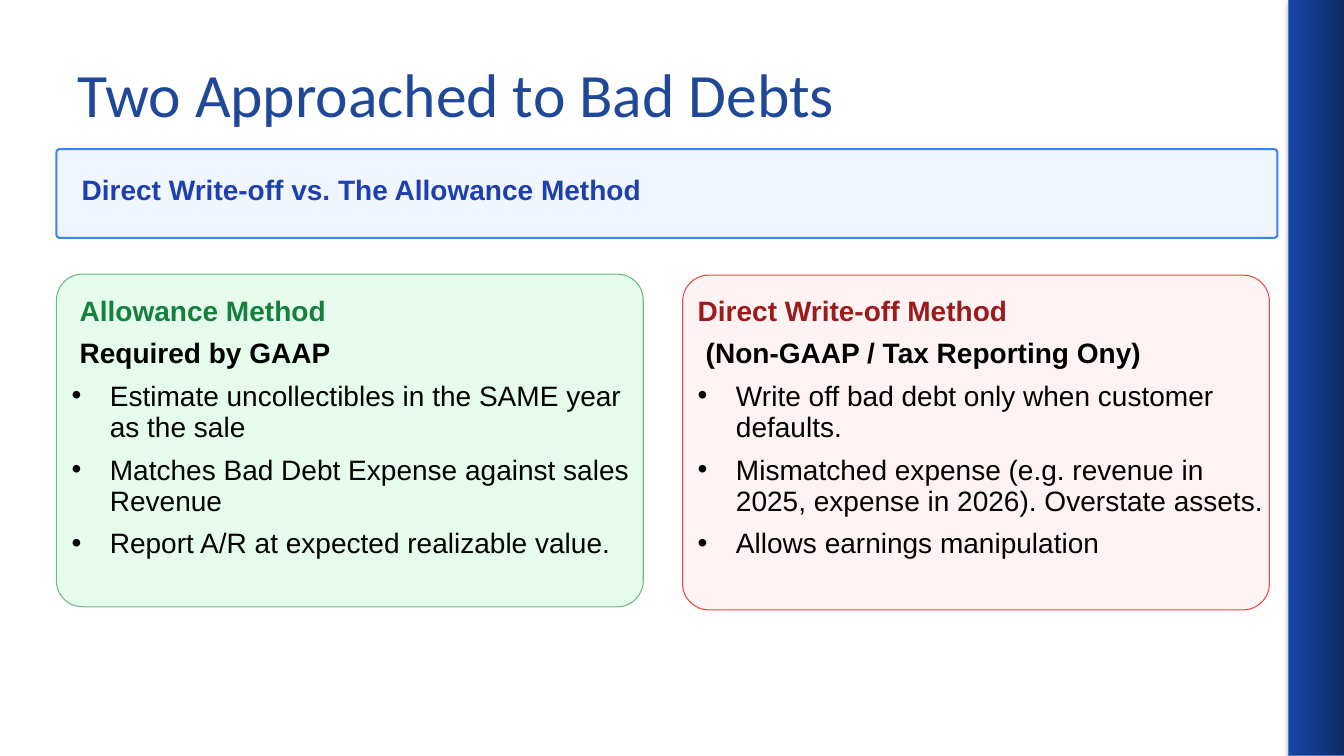
from copy import deepcopy

from lxml import etree
from pptx import Presentation
from pptx.dml.color import RGBColor
from pptx.enum.shapes import MSO_SHAPE
from pptx.enum.text import MSO_ANCHOR, PP_ALIGN
from pptx.oxml.ns import qn
from pptx.util import Inches, Pt

RECT, ROUNDED = MSO_SHAPE.RECTANGLE, MSO_SHAPE.ROUNDED_RECTANGLE
LEFT, MIDDLE = PP_ALIGN.LEFT, MSO_ANCHOR.MIDDLE

COLORS = {
    "title": "1F4899", "text": "000000", "shadow": "000000",
    "band_dark": "0D2960", "band_mid": "123A89", "band_light": "1645A2", "band_line": "4B7EBC",
    "banner_fill": "EFF6FF", "banner_line": "3B82F6", "banner_text": "1E40AF",
    "allowance_fill": "E5FCED", "allowance_line": "6DB587", "allowance_text": "15803D",
    "direct_fill": "FEF2F2", "direct_line": "EF4444", "direct_text": "991B1B",
}


def rgb(name):
    return RGBColor.from_string(COLORS[name])


class SlideBuilder:
    """Holds the text style and the current slide."""
    font, size = "Arial", 20
    line_spacing, space_after = 22.4, 8
    bullet_indent = 0.38

    def __init__(self, slide):
        self.slide = slide

    def title(self, text, left, top, width, height):
        title = self.slide.shapes.title
        title.left, title.top = Inches(left), Inches(top)
        title.width, title.height = Inches(width), Inches(height)
        title.text_frame.text = text
        title.text_frame.vertical_anchor = MIDDLE
        heading = title.text_frame.paragraphs[0]
        heading.alignment = LEFT
        heading.font.name, heading.font.size = "Calibri", Pt(44)
        heading.font.color.rgb = rgb("title")

    def shape(self, kind, left, top, width, height, line, line_width=0.75):
        shape = self.slide.shapes.add_shape(
            kind, Inches(left), Inches(top), Inches(width), Inches(height))
        shape.shadow.inherit = False
        shape.line.color.rgb = rgb(line)
        shape.line.width = Pt(line_width)
        return shape

    def card(self, left, top, width, height, theme, corner, line_width=0.75):
        card = self.shape(ROUNDED, left, top, width, height, f"{theme}_line", line_width)
        card.adjustments[0] = corner
        card.fill.solid()
        card.fill.fore_color.rgb = rgb(f"{theme}_fill")

    def side_band(self, left, width, height):
        band = self.shape(RECT, left, 0, width, height, "band_line")
        band.fill.gradient()
        band.fill.gradient_angle = 180
        # Third gradient stop
        first_stop = band.element.spPr.find(".//" + qn("a:gs"))
        first_stop.addnext(deepcopy(first_stop))
        stops = zip(band.fill.gradient_stops, (0, 0.5, 1), ("band_dark", "band_mid", "band_light"))
        for stop, position, color in stops:
            stop.position = position
            stop.color.rgb = rgb(color)
        # Soft shadow below
        effects = band.element.spPr.find(qn("a:effectLst"))
        shadow = etree.SubElement(effects, qn("a:outerShdw"), blurRad="40000", dist="23000",
                                  dir="5400000", rotWithShape="0")
        color = etree.SubElement(shadow, qn("a:srgbClr"), val=COLORS["shadow"])
        etree.SubElement(color, qn("a:alpha"), val="35000")

    def text(self, left, top, width, height, lines):
        """Each line is (text, color, bold, left indent, bulleted)."""
        box = self.slide.shapes.add_textbox(
            Inches(left), Inches(top), Inches(width), Inches(height))
        frame = box.text_frame
        frame.word_wrap = True
        frame.margin_left = frame.margin_right = frame.margin_top = frame.margin_bottom = 0
        for index, (text, color, bold, indent, bulleted) in enumerate(lines):
            paragraph = frame.add_paragraph() if index else frame.paragraphs[0]
            paragraph.text = text
            paragraph.line_spacing = Pt(self.line_spacing)
            paragraph.space_after = Pt(self.space_after)
            properties = paragraph._p.get_or_add_pPr()
            properties.set("marL", str(Inches(indent)))
            if bulleted:
                properties.set("indent", str(-Inches(indent)))
                etree.SubElement(properties, qn("a:buFont"), typeface="Arial")
                etree.SubElement(properties, qn("a:buChar"), char="•")
            font = paragraph.font
            font.name, font.size, font.bold = self.font, Pt(self.size), bold
            font.color.rgb = rgb(color)

    def method(self, left, top, height, theme, heading, heading_indent, status, points):
        self.card(left, top, 5.82, height, theme, 0.078)
        lines = [(heading, f"{theme}_text", True, heading_indent, False),
                 (status, "text", True, 0.08, False)]
        lines += [(point, "text", False, self.bullet_indent, True) for point in points]
        self.text(left + 0.15, 2.93, 5.7, 2.82, lines)


def main():
    deck = Presentation()
    deck.slide_width, deck.slide_height = Inches(13.33), Inches(7.5)
    builder = SlideBuilder(deck.slides.add_slide(deck.slide_layouts[5]))

    # Side band and title
    builder.side_band(12.78, 0.56, 7.5)
    builder.title("Two Approached to Bad Debts", 0.67, 0.3, 12, 1.25)

    # Banner
    builder.card(0.56, 1.48, 12.11, 0.88, "banner", 0.037, 1.5)
    builder.text(0.81, 1.73, 11.33, 0.34, [
        ("Direct Write-off vs. The Allowance Method", "banner_text", True, 0, False)])

    # The two methods
    builder.method(6.77, 2.73, 3.32, "direct", "Direct Write-off Method", 0,
                   "(Non-GAAP / Tax Reporting Ony)", [
                       "Write off bad debt only when customer defaults.",
                       "Mismatched expense (e.g. revenue in 2025, expense in 2026). "
                       "Overstate assets.",
                       "Allows earnings manipulation"])
    builder.method(0.56, 2.72, 3.3, "allowance", "Allowance Method", 0.08,
                   "Required by GAAP", [
                       "Estimate uncollectibles in the SAME year as the sale",
                       "Matches Bad Debt Expense against sales Revenue",
                       "Report A/R at expected realizable value."])

    deck.save("out.pptx")


if __name__ == "__main__":
    main()
